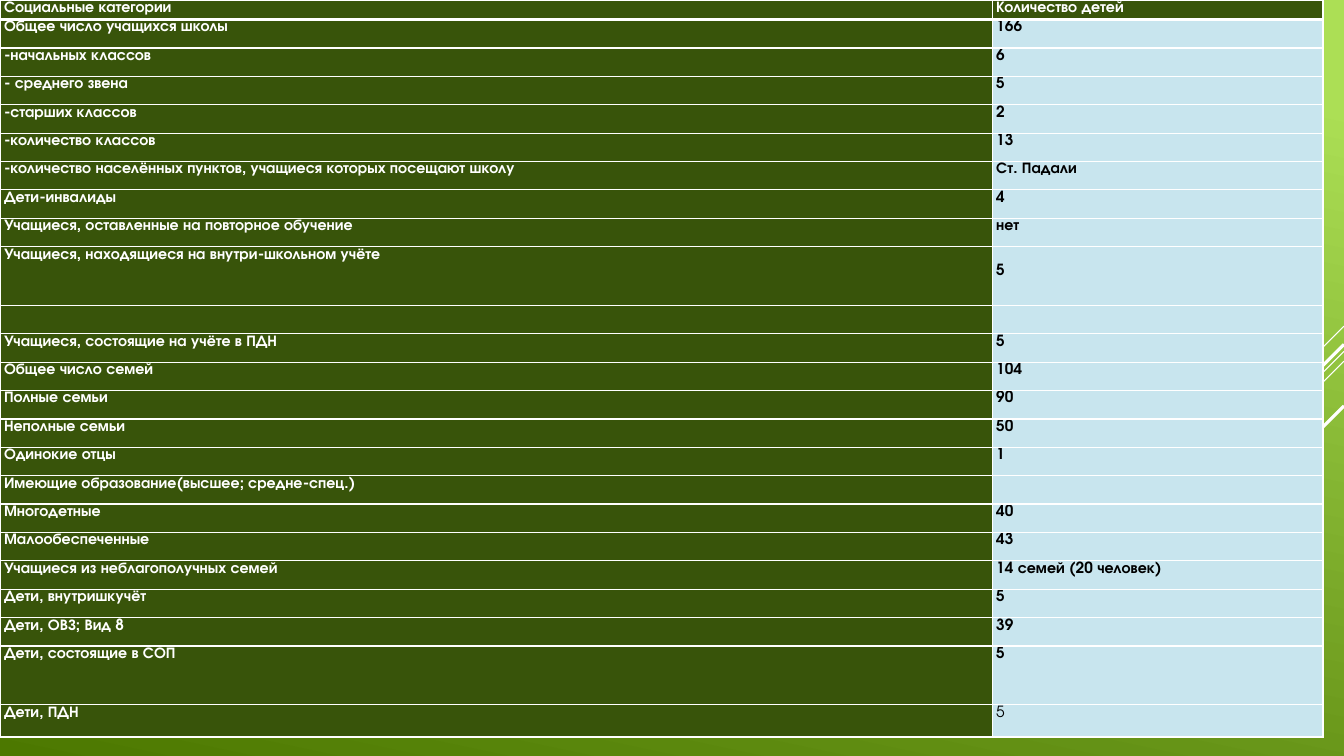
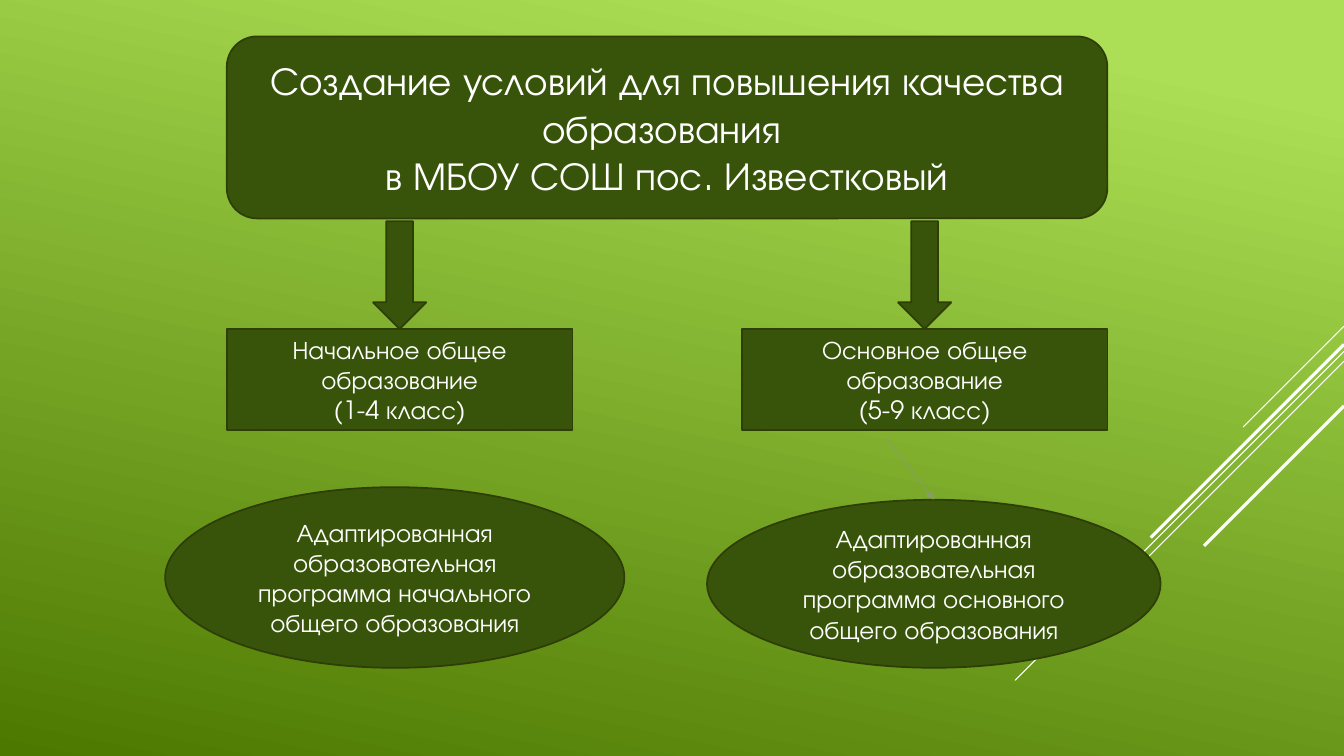
from lxml import etree
from pptx import Presentation
from pptx.dml.color import RGBColor
from pptx.enum.shapes import MSO_CONNECTOR, MSO_SHAPE
from pptx.enum.text import MSO_ANCHOR, PP_ALIGN
from pptx.oxml.ns import qn
from pptx.util import Inches, Pt

# Shared look; lengths are cells of a grid of 96 columns by 54 rows
COLUMNS, ROWS = 96, 54
CELL = Inches(13.33) / COLUMNS
FONT = "TeX Gyre Adventor"
LIGHT_GREEN, DEEP_GREEN = "ACDF55", "4C7800"
PANEL, PANEL_EDGE = "38540A", "2E3E07"
VALUE_FILL, ARROW_GREY = "C8E5EE", "909789"
WHITE, BLACK = "FFFFFF", "000000"

# Diagonal rays: row at the right edge, run to the lower left, weight
RAYS = [(23.3, 7.2, 0.75), (25.1, 23.5, 0.75), (25.8, 14.9, 0.75),
        (24.6, 13.8, 2.25), (29, 10, 2.25)]

HEADER = ("Социальные категории", "Количество детей")
CATEGORIES = [
    ("Общее число учащихся школы", "166"),
    ("-начальных классов", "6"),
    ("- среднего звена", "5"),
    ("-старших классов", "2"),
    ("-количество классов", "13"),
    ("-количество населённых пунктов, учащиеся которых посещают школу", "Ст. Падали"),
    ("Дети-инвалиды", "4"),
    ("Учащиеся, оставленные на повторное обучение", "нет"),
    ("Учащиеся, находящиеся на внутри-школьном учёте", "5"),
    ("", ""),
    ("Учащиеся, состоящие на учёте в ПДН", "5"),
    ("Общее число семей", "104"),
    ("Полные семьи", "90"),
    ("Неполные семьи", "50"),
    ("Одинокие отцы", "1"),
    ("Имеющие образование(высшее; средне-спец.)", ""),
    ("Многодетные", "40"),
    ("Малообеспеченные", "43"),
    ("Учащиеся из неблагополучных семей", "14 семей (20 человек)"),
    ("Дети, внутришкучёт", "5"),
    ("Дети, ОВЗ; Вид 8", "39"),
    ("Дети, состоящие в СОП", "5"),
    ("Дети, ПДН", "5"),
]
SCHOOL_RECORD_ROW = 9  # its value stands on the second line
ROW_HEIGHTS = {0: 1.4, SCHOOL_RECORD_ROW: 4.2, 22: 4.2, 23: 2.3}


def color(hex_string):
    return RGBColor.from_string(hex_string)


def grid(cells):
    return round(cells * CELL)


def write(paragraph, text, size, ink, bold=False):
    run = paragraph.add_run()
    run.text = text
    run.font.name = FONT
    run.font.size = Pt(size)
    run.font.bold = bold
    run.font.color.rgb = color(ink)


def draw_line(slide, start, end, ink, weight):
    line = slide.shapes.add_connector(
        MSO_CONNECTOR.STRAIGHT, *map(grid, (*start, *end)))
    line.line.color.rgb = color(ink)
    line.line.width = Pt(weight)
    etree.SubElement(line._element.spPr, qn("a:effectLst"))
    return line


def set_background(master):
    fill = master.background.fill
    fill.gradient()
    fill.gradient_angle = 258
    stops = zip(fill.gradient_stops, (0.1, 1), (LIGHT_GREEN, DEEP_GREEN))
    for stop, position, tint in stops:
        stop.position = position
        stop.color.rgb = color(tint)


def new_slide(deck):
    slide = deck.slides.add_slide(deck.slide_layouts[6])
    for row, run, weight in RAYS:
        draw_line(slide, (COLUMNS, row), (COLUMNS - run, row + run), WHITE, weight)
    return slide


def set_borders(cell, top, bottom):
    properties = cell._tc.get_or_add_tcPr()
    sides = (("L", 1), ("R", 1), ("T", top), ("B", bottom))
    for index, (side, weight) in enumerate(sides):
        edge = etree.Element(qn(f"a:ln{side}"), w=str(Pt(weight)))
        solid = etree.SubElement(edge, qn("a:solidFill"))
        etree.SubElement(solid, qn("a:srgbClr"), val=WHITE)
        properties.insert(index, edge)


def fill_cell(cell, text, fill, ink, bold):
    cell.margin_left = cell.margin_right = Inches(0.04)
    cell.margin_top = cell.margin_bottom = 0
    cell.fill.solid()
    cell.fill.fore_color.rgb = color(fill)
    paragraph = cell.text_frame.paragraphs[0]
    paragraph.line_spacing = 1.07
    if text:
        write(paragraph, text, 11, ink, bold)
    else:
        paragraph._p.get_or_add_endParaRPr().set("sz", "1100")


def category_table(slide, left, top, width, height):
    records = [HEADER, *CATEGORIES]
    table = slide.shapes.add_table(
        len(records), 2, *map(grid, (left, top, width, height))).table
    for column, share in zip(table.columns, (0.75, 0.25)):
        column.width = grid(width * share)
    plain_height = ((height - sum(ROW_HEIGHTS.values()))
                    / (len(records) - len(ROW_HEIGHTS)))
    last = len(records) - 1
    for row, record in enumerate(records):
        table.rows[row].height = grid(ROW_HEIGHTS.get(row, plain_height))
        for column, text in enumerate(record):
            is_value = column == 1 and row > 0
            cell = table.cell(row, column)
            fill_cell(cell, text, VALUE_FILL if is_value else PANEL,
                      BLACK if is_value else WHITE,
                      bold=not (is_value and row == last))
            set_borders(cell, top=3 if row == 1 else 1, bottom=3 if row == 0 else 1)
    table.cell(SCHOOL_RECORD_ROW, 1).margin_top = Inches(0.16)


def panel(slide, kind, box, lines=(), size=18):
    shape = slide.shapes.add_shape(kind, *map(grid, box))
    shape.shadow.inherit = False
    shape.fill.solid()
    shape.fill.fore_color.rgb = color(PANEL)
    shape.line.color.rgb = color(PANEL_EDGE)
    shape.line.width = Pt(1.25)
    frame = shape.text_frame
    frame.word_wrap = True
    frame.vertical_anchor = MSO_ANCHOR.MIDDLE
    for index, text in enumerate(lines):
        paragraph = frame.add_paragraph() if index else frame.paragraphs[0]
        paragraph.alignment = PP_ALIGN.CENTER
        write(paragraph, text, size, WHITE)


def stage_branch(slide, left, top, width, stage, program, program_box):
    """Arrow down to a school stage, with its programme below."""
    arrow_width, arrow_height, stage_height = 3.8, 7.7, 7.2
    stage_top = top + arrow_height
    panel(slide, MSO_SHAPE.RECTANGLE, (left, stage_top, width, stage_height), stage)
    panel(slide, MSO_SHAPE.DOWN_ARROW,
          (left + (width - arrow_width) / 2, top, arrow_width, arrow_height))
    panel(slide, MSO_SHAPE.OVAL, program_box, [program])


def program_link(slide, start, end):
    link = draw_line(slide, start, end, ARROW_GREY, 0.75)
    outline = link.line._get_or_add_ln()
    tint = outline.find(f".//{qn('a:srgbClr')}")
    etree.SubElement(tint, qn("a:alpha"), val="60000")
    etree.SubElement(outline, qn("a:tailEnd"), type="triangle")


def categories_slide(deck):
    category_table(new_slide(deck), 0, 0, 94.5, 52.7)


def quality_slide(deck):
    slide = new_slide(deck)
    # Goal
    panel(slide, MSO_SHAPE.ROUNDED_RECTANGLE, (16.2, 2.6, 62.9, 13),
          ["Создание условий для повышения качества образования ",
           "в МБОУ СОШ пос. Известковый"], size=28)
    # Two school stages
    stage_branch(slide, 16.2, 15.8, 24.7,
                 ["Начальное общее образование", "(1-4 класс)"],
                 "Адаптированная образовательная программа начального общего образования",
                 (11.8, 34.8, 32.8, 12.9))
    stage_branch(slide, 53, 15.8, 26.1,
                 ["Основное общее образование", "(5-9 класс)"],
                 "Адаптированная образовательная программа основного общего образования",
                 (50.5, 35.7, 32.4, 12))
    program_link(slide, (63.4, 31.4), (66.7, 35.7))


def main():
    deck = Presentation()
    deck.slide_width, deck.slide_height = grid(COLUMNS), grid(ROWS)
    set_background(deck.slide_master)
    categories_slide(deck)
    quality_slide(deck)
    deck.save("out.pptx")


if __name__ == "__main__":
    main()
